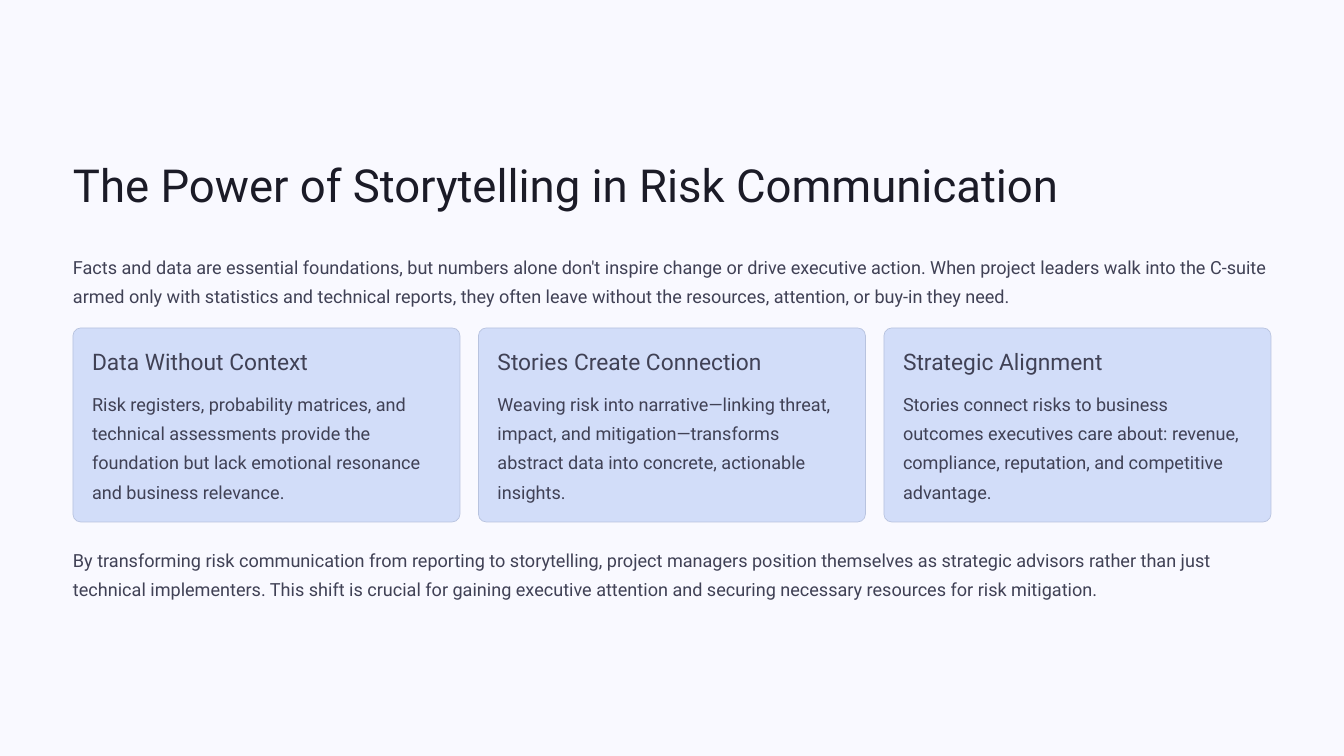
from pptx import Presentation
from pptx import util as u
from pptx.dml.color import RGBColor
from pptx.enum import shapes, text

PX = u.Inches(1) / 84
FONT = "Roboto"
PAPER = RGBColor(0xF9, 0xF9, 0xFF)
INK = RGBColor(0x1B, 0x1B, 0x27)
BODY = RGBColor(0x40, 0x41, 0x55)
CARD_FILL = RGBColor(0xD2, 0xDD, 0xF9)
CARD_LINE = RGBColor(0xB8, 0xC3, 0xDF)

TITLE = "The Power of Storytelling in Risk Communication"
INTRO = (
    "Facts and data are essential foundations, but numbers alone don't inspire change "
    "or drive executive action. When project leaders walk into the C-suite armed only "
    "with statistics and technical reports, they often leave without the resources, "
    "attention, or buy-in they need."
)
CARDS = [
    ("Data Without Context",
     "Risk registers, probability matrices, and technical assessments provide the "
     "foundation but lack emotional resonance and business relevance."),
    ("Stories Create Connection",
     "Weaving risk into narrative—linking threat, impact, and mitigation—transforms "
     "abstract data into concrete, actionable insights."),
    ("Strategic Alignment",
     "Stories connect risks to business outcomes executives care about: revenue, "
     "compliance, reputation, and competitive advantage."),
]
CLOSING = (
    "By transforming risk communication from reporting to storytelling, project managers "
    "position themselves as strategic advisors rather than just technical implementers. "
    "This shift is crucial for gaining executive attention and securing necessary "
    "resources for risk mitigation."
)


def emu(*lengths):
    return [round(n * PX) for n in lengths]


def write(sp, words, size, leading, color, wrap=True):
    tf = sp.text_frame
    tf.margin_left = tf.margin_top = tf.margin_right = tf.margin_bottom = 0
    tf.word_wrap = wrap
    tf.auto_size = text.MSO_AUTO_SIZE.NONE
    tf.vertical_anchor = text.MSO_ANCHOR.TOP
    p = tf.paragraphs[0]
    p.alignment = text.PP_ALIGN.LEFT
    p.line_spacing = u.Pt(leading)
    p.space_before = p.space_after = u.Pt(0)
    r = p.add_run()
    r.text = words
    r.font.name = FONT
    r.font.size = u.Pt(size)
    r.font.color.rgb = color


def add_title(s, x, y, w, h):
    sp = s.shapes.title
    sp.left, sp.top, sp.width, sp.height = emu(x, y, w, h)
    write(sp, TITLE, 39, 48.5, INK, wrap=False)


def add_body(s, words, x, y, w, h):
    write(s.shapes.add_textbox(*emu(x, y, w, h)), words, 15.5, 25, BODY)


def add_card(s, heading, words, x, y, w, h):
    pad = 19
    sp = s.shapes.add_shape(shapes.MSO_SHAPE.ROUNDED_RECTANGLE, *emu(x, y, w, h))
    sp.adjustments[0] = 0.04
    sp.shadow.inherit = False
    sp.fill.solid()
    sp.fill.fore_color.rgb = CARD_FILL
    sp.line.color.rgb = CARD_LINE
    sp.line.width = u.Pt(0.6)
    inner = w - 2 * pad
    label = s.shapes.add_textbox(*emu(x + pad, y + pad, inner, 29))
    write(label, heading, 19.5, 24, BODY, wrap=False)
    add_body(s, words, x + pad, y + 58, inner, 117)


def add_cards(s, x, y, w, h):
    card_w = 387
    pitch = (w - card_w) / (len(CARDS) - 1)
    for i, (heading, words) in enumerate(CARDS):
        add_card(s, heading, words, x + i * pitch, y, card_w, h)


def main():
    prs = Presentation()
    prs.slide_width, prs.slide_height = emu(1344, 756)
    s = prs.slides.add_slide(prs.slide_layouts[5])
    s.background.fill.solid()
    s.background.fill.fore_color.rgb = PAPER
    left, width = 73, 1198
    add_title(s, left, 155, width, 57)
    add_body(s, INTRO, left, 249, width, 58)
    add_cards(s, left, 328, width, 194)
    add_body(s, CLOSING, left, 542, width, 58)
    prs.save("out.pptx")


if __name__ == "__main__":
    main()
